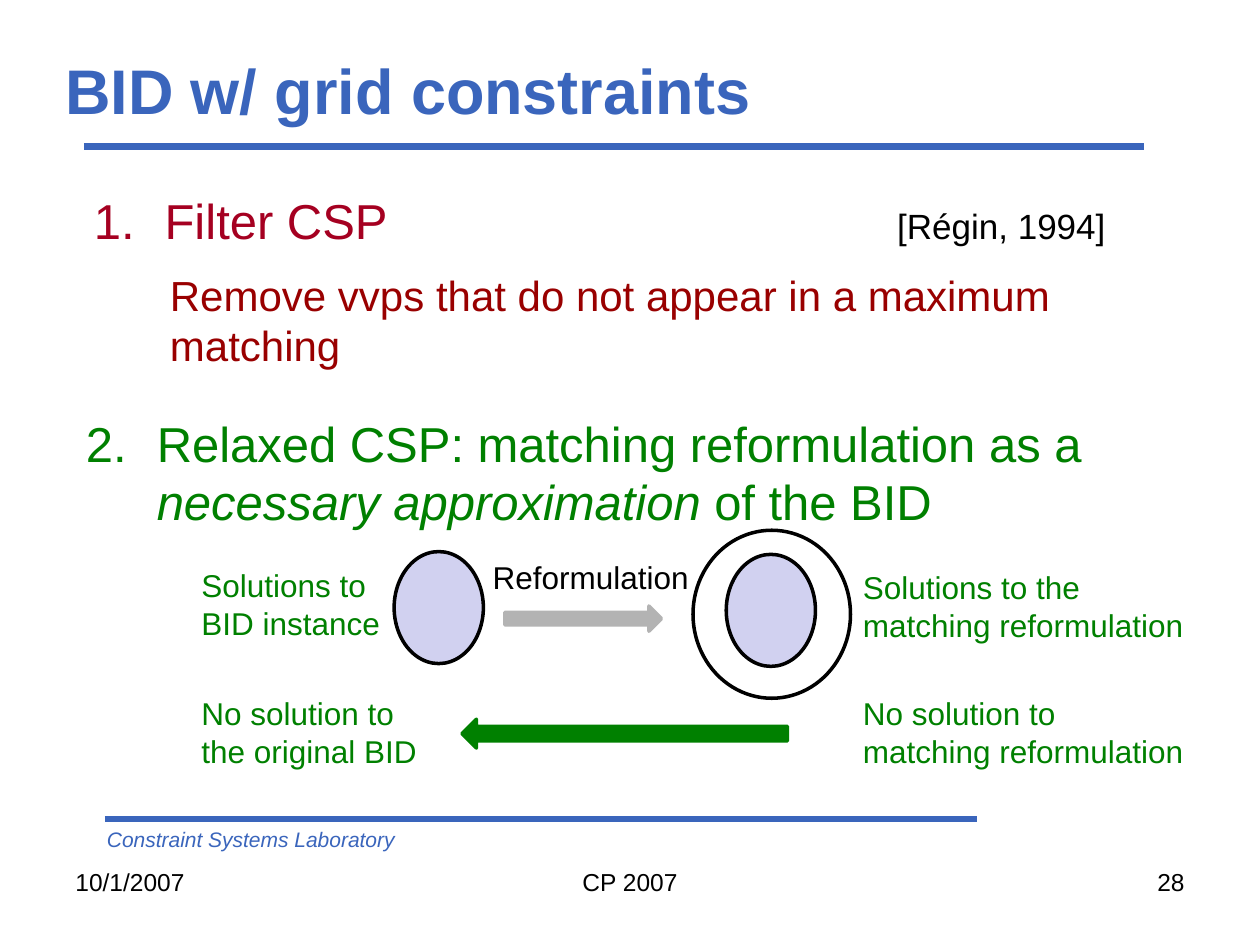
from pptx import Presentation
from pptx.dml.color import RGBColor
from pptx.enum.shapes import MSO_CONNECTOR as Line, MSO_SHAPE as Shape
from pptx.enum.text import MSO_ANCHOR as Anchor, MSO_AUTO_SIZE as Fit, PP_ALIGN as Align
from pptx.oxml.ns import qn
from pptx.util import Pt
from lxml.etree import SubElement

BLUE, GREEN, GREY, BLACK = "3A65BC", "008000", "B3B3B3", "000000"
CRIMSON, DARK_RED, LILAC, WHITE = "A50021", "990000", "D1D1F0", "FFFFFF"


def rgb(color):
    """Turn a hex string into a colour."""
    return RGBColor.from_string(color)


def add_run(p, text, size, color, bold=False, italic=False):
    """Append one formatted run to a paragraph."""
    r = p.add_run()
    r.text = text
    font = r.font
    font.name, font.size = "Arial", Pt(size)
    font.bold, font.italic = bold, italic
    font.color.rgb = rgb(color)


def add_text(s, box, lines, size, color, align=Align.LEFT, wrap=True, italic=False):
    """Add a text box with one paragraph per line and return its frame."""
    tf = s.shapes.add_textbox(*map(Pt, box)).text_frame
    tf.word_wrap = wrap
    for i, line in enumerate(lines):
        p = tf.add_paragraph() if i else tf.paragraphs[0]
        p.alignment = align
        add_run(p, line, size, color, italic=italic)
    return tf


def add_numbered(s, box, number, color, indent, runs, tab=None):
    """Add a numbered item made of (text, size, colour, italic) runs."""
    tf = s.shapes.add_textbox(*map(Pt, box)).text_frame
    tf.word_wrap = True
    p = tf.paragraphs[0]
    pPr = p._p.get_or_add_pPr()
    pPr.set("marL", str(Pt(indent)))
    pPr.set("indent", str(-Pt(40.5)))
    SubElement(SubElement(pPr, qn("a:buClr")), qn("a:srgbClr"), val=color)
    SubElement(pPr, qn("a:buFont"), typeface="Arial")
    SubElement(pPr, qn("a:buAutoNum"), type="arabicPeriod", startAt=str(number))
    if tab:
        tabs = SubElement(pPr, qn("a:tabLst"))
        SubElement(tabs, qn("a:tab"), pos=str(Pt(tab)), algn="r")
    for text, size, run_color, italic in runs:
        add_run(p, text, size, run_color, italic=italic)


def add_rule(s, left, right, y):
    """Add a thick horizontal blue rule."""
    line = s.shapes.add_connector(Line.STRAIGHT, Pt(left), Pt(y), Pt(right), Pt(y))
    line.line.color.rgb = rgb(BLUE)
    line.line.width = Pt(4)
    SubElement(line._element.spPr, qn("a:effectLst"))


def add_shape(s, kind, box, fill, outline):
    """Add a filled and outlined preset shape."""
    sp = s.shapes.add_shape(kind, *map(Pt, box))
    sp.shadow.inherit = False
    sp.fill.solid()
    sp.fill.fore_color.rgb = rgb(fill)
    sp.line.color.rgb = rgb(outline)
    sp.line.width = Pt(2)


def add_title(s, text):
    """Place and format the title placeholder."""
    sp = s.shapes.title
    sp.left, sp.top, sp.width, sp.height = map(Pt, (30, 24, 708, 54))
    tf = sp.text_frame
    tf.auto_size, tf.vertical_anchor = Fit.NONE, Anchor.MIDDLE
    p = tf.paragraphs[0]
    p.alignment = Align.LEFT
    add_run(p, text, 36, BLUE, bold=True)


def add_diagram(s):
    """Add the solution sets, the arrows between them and their labels."""
    add_shape(s, Shape.RIGHT_ARROW, (288.5, 346.3, 89.5, 14.4), GREY, GREY)
    add_shape(s, Shape.LEFT_ARROW, (264, 411, 186, 16.5), GREEN, GREEN)
    add_shape(s, Shape.OVAL, (396, 303, 90, 96), WHITE, BLACK)
    for left, top in ((225.2, 315.2), (415, 316.8)):
        add_shape(s, Shape.OVAL, (left, top, 51, 64), LILAC, BLACK)
    add_text(s, (274.5, 315.5, 127.5, 29), ["Reformulation"], 18, BLACK, wrap=False)
    labels = [
        (108, 320, 132, ["Solutions to BID instance"]),
        (486, 321, 204, ["Solutions to the matching reformulation"]),
        (108, 393, 156, ["No solution to", "the original BID"]),
        (486, 393, 204, ["No solution to", "matching reformulation"]),
    ]
    for left, top, width, lines in labels:
        add_text(s, (left, top, width, 51), lines, 18, GREEN)


def add_footer(s):
    """Add the laboratory name, date, event and slide number."""
    add_text(s, (54, 469, 378, 21.6), ["Constraint Systems Laboratory"], 12, BLUE, italic=True)
    cells = [
        (36, 168, "10/1/2007", Align.LEFT),
        (246, 228, "CP 2007", Align.CENTER),
        (516, 168, "28", Align.RIGHT),
    ]
    for left, width, text, align in cells:
        add_text(s, (left, 492, width, 37.5), [text], 14, BLACK, align)


def main():
    """Build the slide and save it."""
    prs = Presentation()
    prs.slide_width, prs.slide_height = Pt(720), Pt(540)
    s = prs.slides.add_slide(prs.slide_layouts[5])
    add_rule(s, 48, 654, 84)
    add_rule(s, 60, 558, 468)
    add_title(s, "BID w/ grid constraints")
    add_numbered(s, (42, 105.5, 642, 42), 1, CRIMSON, 45, [
        ("Filter CSP\t", 28, CRIMSON, False),
        ("[Régin, 1994]", 20, BLACK, False),
    ], tab=625)
    add_text(s, (90, 150.5, 588, 65.5),
             ["Remove vvps that do not appear in a maximum matching"], 24, DARK_RED)
    add_numbered(s, (42, 232.5, 642, 74), 2, GREEN, 40.5, [
        ("Relaxed CSP: matching reformulation as a ", 28, GREEN, False),
        ("necessary approximation ", 28, GREEN, True),
        ("of the BID", 28, GREEN, False),
    ])
    add_diagram(s)
    add_footer(s)
    prs.save("out.pptx")


if __name__ == "__main__":
    main()
